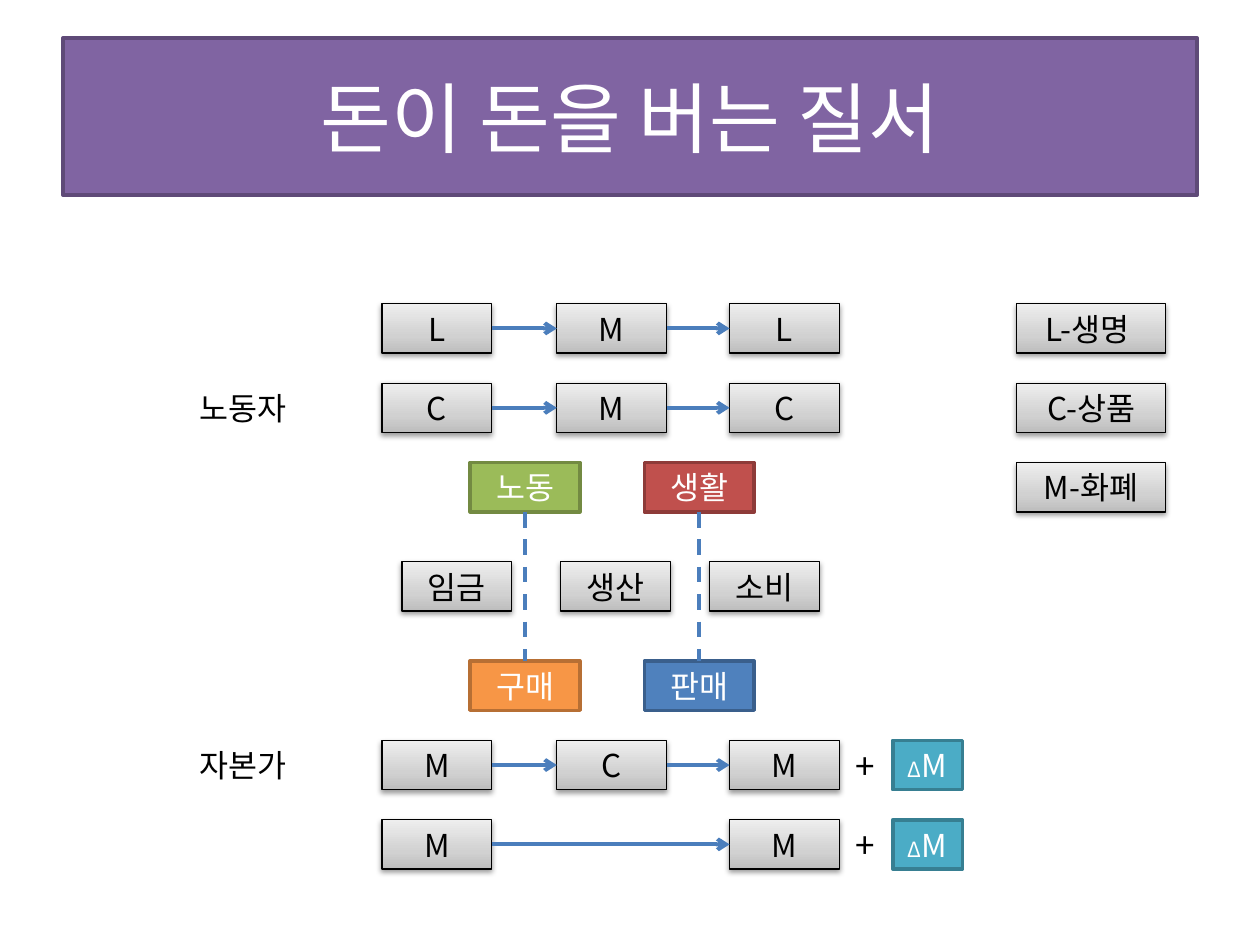
"""Build the slide on how money earns money, with worker and capitalist circuits."""
from copy import deepcopy

from lxml import etree
from pptx import Presentation
from pptx.dml.color import RGBColor
from pptx.enum.dml import MSO_LINE
from pptx.enum.shapes import MSO_CONNECTOR, MSO_SHAPE
from pptx.enum.text import MSO_ANCHOR, PP_ALIGN
from pptx.oxml.ns import qn
from pptx.util import Pt

RECTANGLE, STRAIGHT = MSO_SHAPE.RECTANGLE, MSO_CONNECTOR.STRAIGHT
MIDDLE, CENTER, DASH = MSO_ANCHOR.MIDDLE, PP_ALIGN.CENTER, MSO_LINE.DASH
TOP, LEFT, BOTTOM, RIGHT = range(4)

TITLE = "돈이 돈을 버는 질서"
CIRCUITS = [(0, "LML"), (1, "CMC"), (5.5, "MCM"), (6.5, "M M")]
ACTORS = [(1, "노동자"), (5.5, "자본가")]
LEGEND = ["L-생명 ", "C-상품", "M-화폐"]
EXCHANGES = [(268.6, ("노동", "green"), ("구매", "orange")),
             (368.2, ("생활", "red"), ("판매", "blue"))]
FLOWS = [(229.7, "임금"), (320.4, "생산"), (405.4, "소비")]
SURPLUS_ROWS = [5.5, 6.5]
SURPLUS = [("Δ", 12), ("M", 18)]

THEME = {
    "font": "Noto Sans CJK KR",
    "title": 44, "body": 18, "plus": 20,
    "white": "FFFFFF", "black": "000000", "arrow": "4B7EBC",
    "silver": [(0, "BDBDBD"), (0.35, "D1D1D1"), (1, "EEEEEE")],
    "purple": ("8064A2", "5F4A78"), "green": ("9BBB59", "738A42"),
    "red": ("C0504D", "8E3B39"), "orange": ("F79646", "B76F34"),
    "blue": ("4F81BD", "3A5F8C"), "teal": ("4BACC6", "377F92"),
}
FIRST_ROW, ROW_PITCH, BOX_W, BOX_H = 173.6, 45.36, 62.8, 28.2
COLUMNS = [218.2, 318.2, 416.9]
FLOW_ROW, LOWER_ROW = 3.25, 4.5


def rgb(code):
    return RGBColor.from_string(code)


def write(shape, runs, size, color):
    frame = shape.text_frame
    frame.word_wrap = True
    frame.vertical_anchor = MIDDLE
    frame.margin_left = frame.margin_right = 0
    paragraph = frame.paragraphs[0]
    paragraph.alignment = CENTER
    for text, run_size in runs:
        run = paragraph.add_run()
        run.text = text
        if run_size:
            run.font.size = Pt(run_size)
    font = paragraph.font
    font.size, font.name = Pt(size), THEME["font"]
    font.color.rgb = rgb(color)
    defaults = paragraph._p.pPr.find(qn("a:defRPr"))
    etree.SubElement(defaults, qn("a:ea"), typeface=THEME["font"])


def paint(shape, style):
    fill, outline = THEME[style]
    shape.fill.solid()
    shape.fill.fore_color.rgb = rgb(fill)
    shape.line.color.rgb = rgb(outline)
    shape.line.width = Pt(2)


def paint_silver(shape):
    fill = shape.fill
    fill.gradient()
    fill.gradient_angle = 90
    stop_list = shape._element.spPr.find(".//" + qn("a:gsLst"))
    stop_list.append(deepcopy(stop_list[0]))
    for stop, (position, color) in zip(fill.gradient_stops, THEME["silver"]):
        stop.position, stop.color.rgb = position, rgb(color)
    shape.line.color.rgb = rgb(THEME["black"])
    shape.line.width = Pt(0.75)
    effects = shape._element.spPr.find(qn("a:effectLst"))
    shadow = etree.SubElement(effects, qn("a:outerShdw"), blurRad=str(Pt(3.1)),
                              dist=str(Pt(1.6)), dir="5400000", rotWithShape="0")
    shade = etree.SubElement(shadow, qn("a:srgbClr"), val=THEME["black"])
    etree.SubElement(shade, qn("a:alpha"), val="38000")


def add_box(shapes, left, row, runs, style="silver", width=BOX_W, size=THEME["body"]):
    top = FIRST_ROW + row * ROW_PITCH
    box = shapes.add_shape(RECTANGLE, Pt(left), Pt(top), Pt(width), Pt(BOX_H))
    box.shadow.inherit = False
    if style == "silver":
        paint_silver(box)
    elif style == "white":
        box.fill.solid()
        box.fill.fore_color.rgb = rgb(THEME["white"])
        box.line.fill.background()
    else:
        paint(box, style)
    runs = [(runs, None)] if isinstance(runs, str) else runs
    write(box, runs, size, THEME["black" if style in ("silver", "white") else "white"])
    return box


def link(shapes, start, start_site, end, end_site, dashed=False):
    line = shapes.add_connector(STRAIGHT, 0, 0, 0, 0)
    line.begin_connect(start, start_site)
    line.end_connect(end, end_site)
    line.line.color.rgb = rgb(THEME["arrow"])
    line.line.width = Pt(2.25)
    if dashed:
        line.line.dash_style = DASH
    else:
        etree.SubElement(line.line._get_or_add_ln(), qn("a:tailEnd"), type="arrow")
    etree.SubElement(line._element.spPr, qn("a:effectLst"))


def main():
    deck = Presentation()
    deck.slide_width, deck.slide_height = Pt(720), Pt(540)
    shapes = deck.slides.add_slide(deck.slide_layouts[5]).shapes

    title = shapes.title
    title.left, title.top, title.width, title.height = Pt(36), Pt(21.6), Pt(648), Pt(90)
    paint(title, "purple")
    write(title, [(TITLE, None)], THEME["title"], THEME["white"])

    for row, letters in CIRCUITS:
        stages = [add_box(shapes, left, row, letter)
                  for left, letter in zip(COLUMNS, letters) if letter != " "]
        for start, end in zip(stages, stages[1:]):
            link(shapes, start, RIGHT, end, LEFT)
    for row, actor in ACTORS:
        add_box(shapes, 87.8, row, actor, "white", 102.2)
    for row, meaning in enumerate(LEGEND):
        add_box(shapes, 581, row, meaning, width=85)
    for left, (worker_side, worker_style), (capital_side, capital_style) in EXCHANGES:
        upper = add_box(shapes, left, 2, worker_side, worker_style)
        lower = add_box(shapes, left, LOWER_ROW, capital_side, capital_style)
        link(shapes, upper, BOTTOM, lower, TOP, dashed=True)
    for left, flow in FLOWS:
        add_box(shapes, left, FLOW_ROW, flow)
    for row in SURPLUS_ROWS:
        add_box(shapes, 484.6, row, "+", "white", 19.4, THEME["plus"])
        add_box(shapes, 510.2, row, SURPLUS, "teal", 39.8)

    deck.save("out.pptx")


if __name__ == "__main__":
    main()
